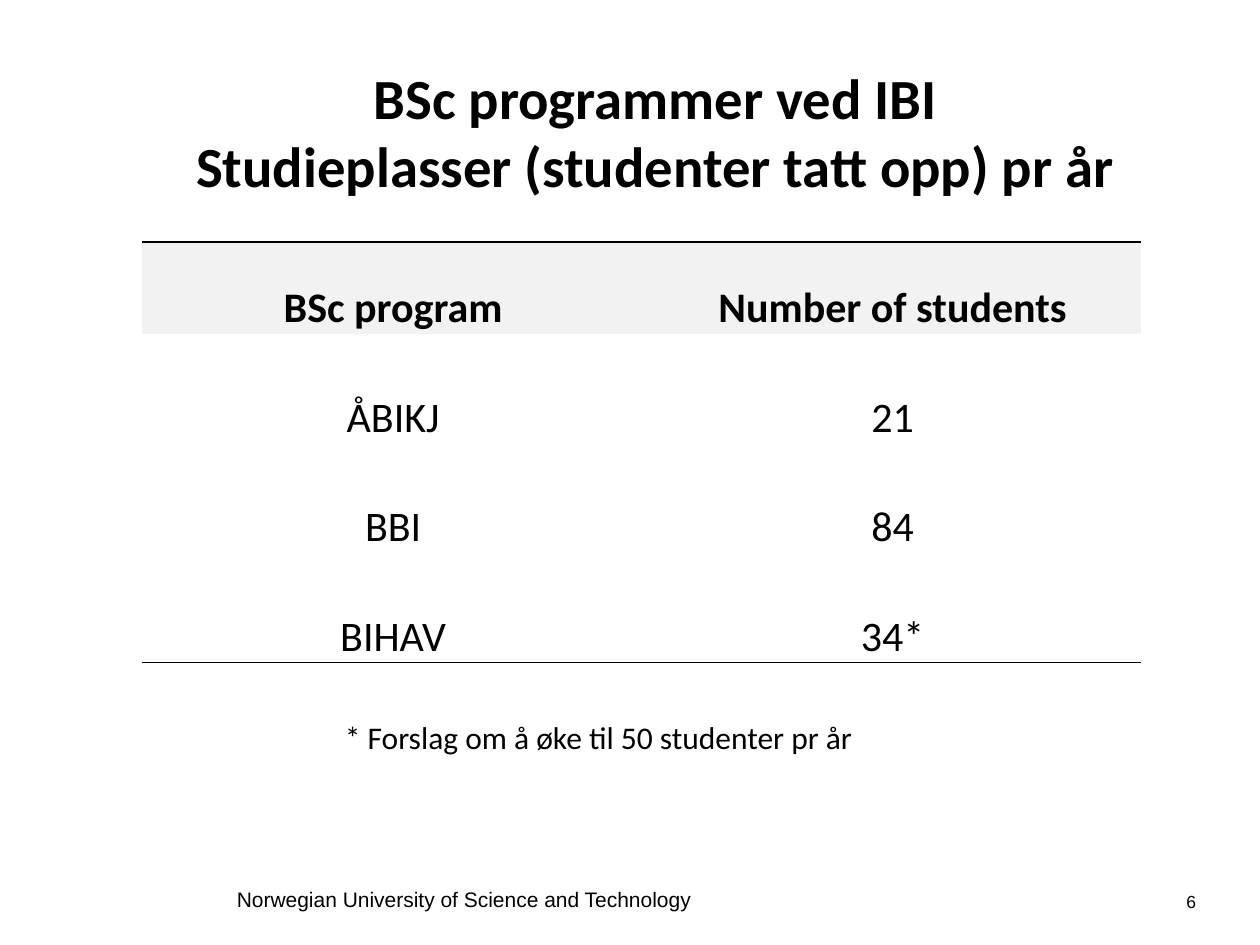
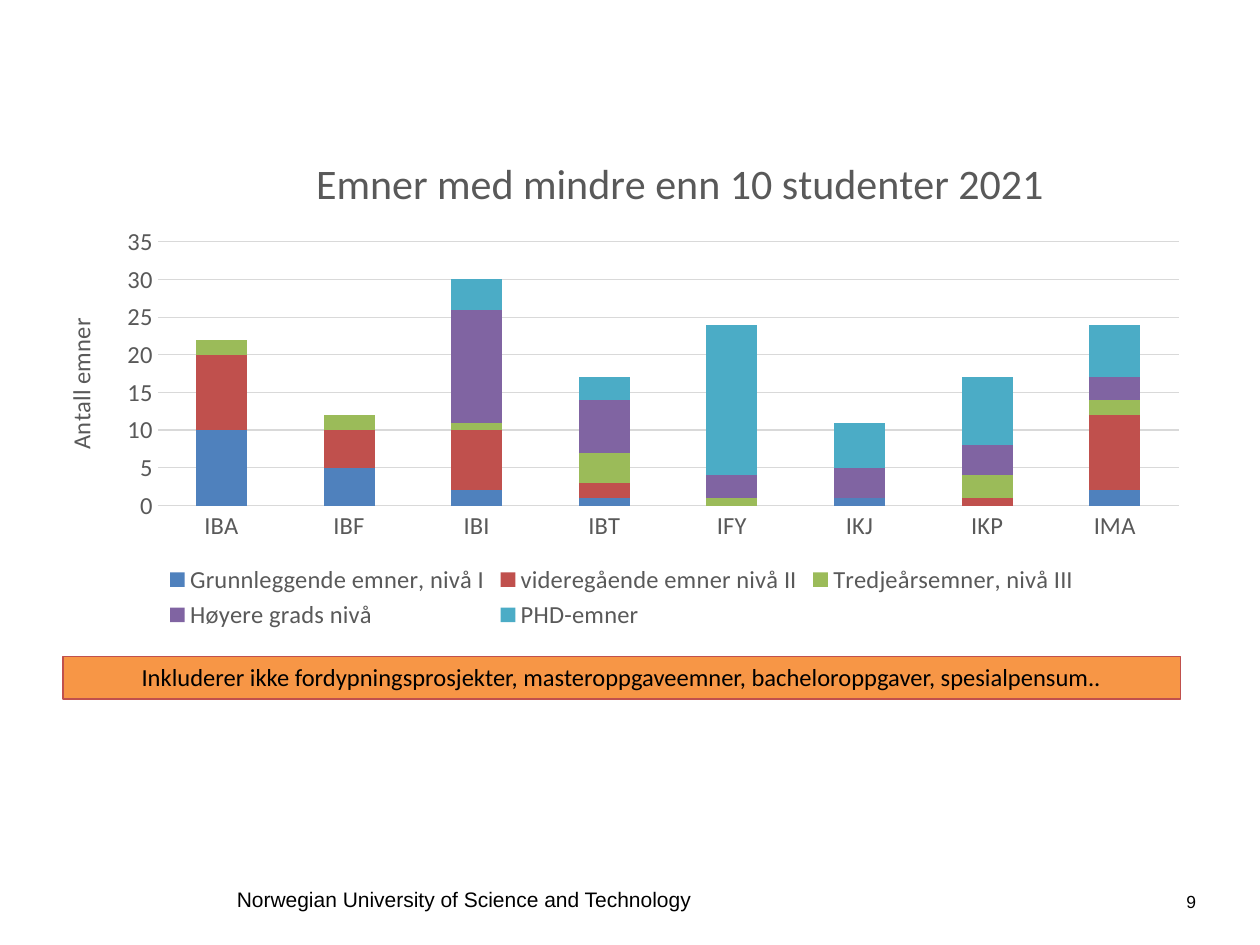
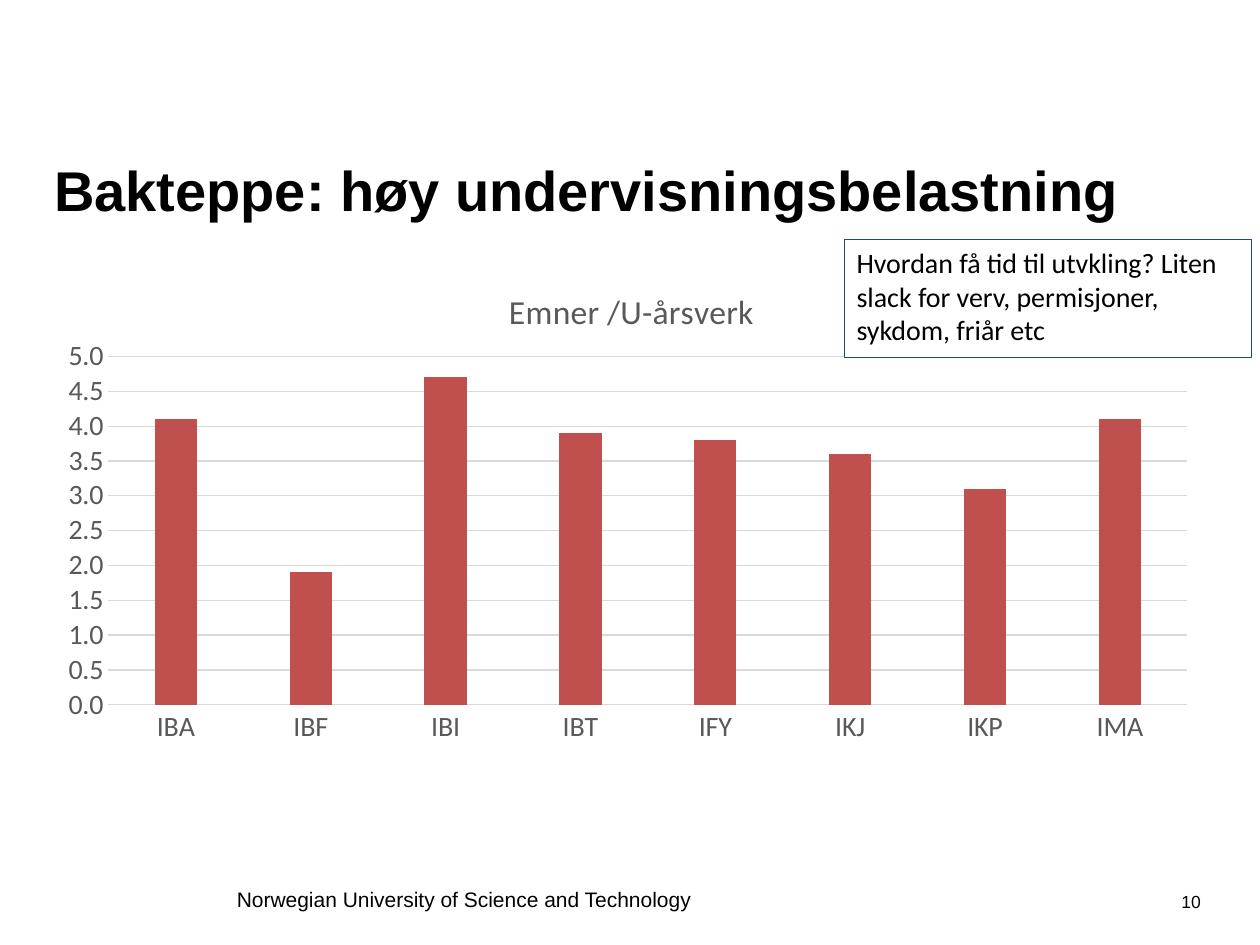
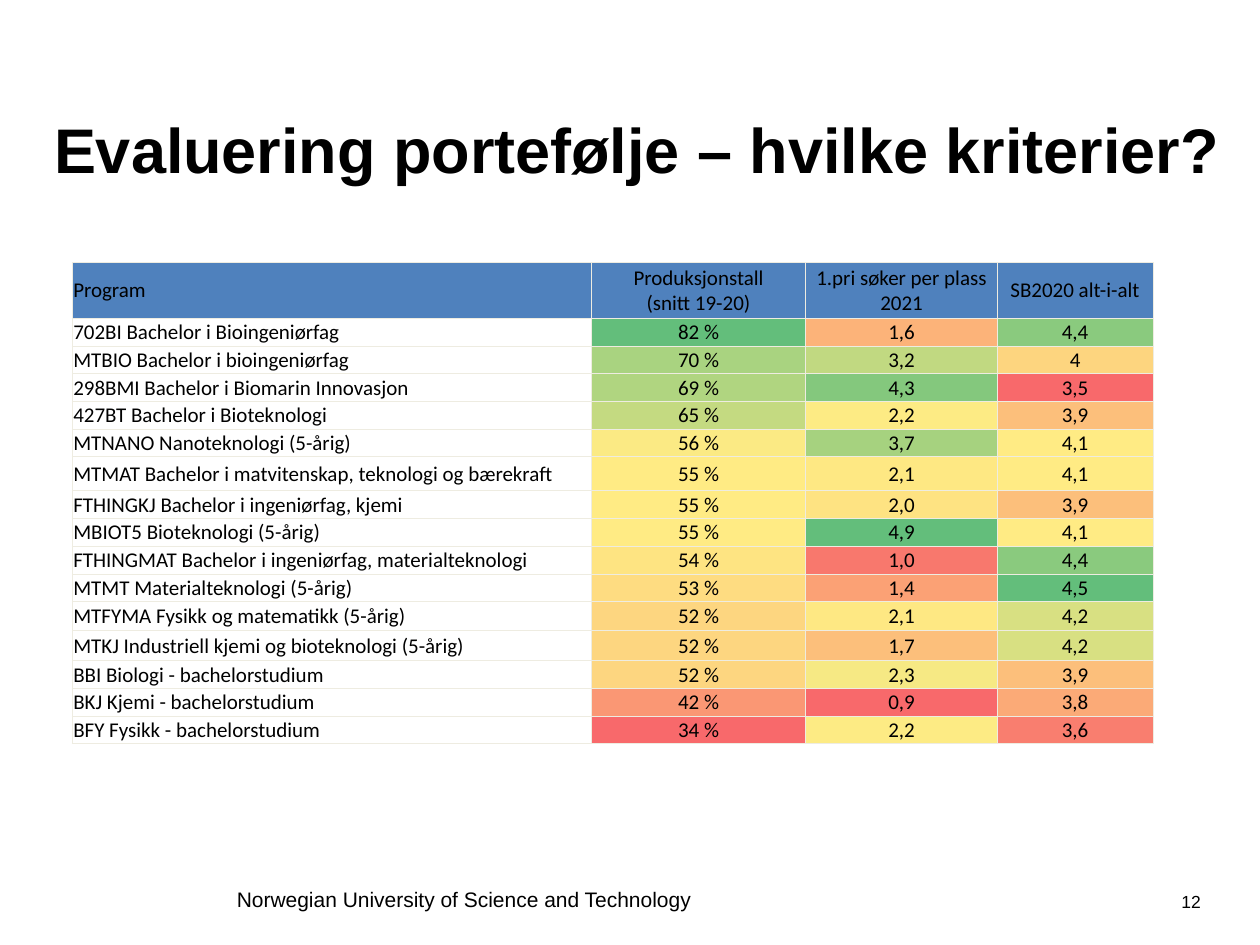
"""Build four slides on study programmes: two tables and two column charts."""
from lxml import etree
from pptx import Presentation
from pptx.chart.data import CategoryChartData
from pptx.dml.color import RGBColor
from pptx.enum.chart import XL_CHART_TYPE, XL_LEGEND_POSITION, XL_TICK_MARK
from pptx.enum.shapes import MSO_SHAPE
from pptx.enum.text import MSO_ANCHOR, PP_ALIGN
from pptx.oxml.ns import qn
from pptx.util import Pt

LEFT, CENTER = PP_ALIGN.LEFT, PP_ALIGN.CENTER
TOP, MIDDLE, BOTTOM = MSO_ANCHOR.TOP, MSO_ANCHOR.MIDDLE, MSO_ANCHOR.BOTTOM
STACKED, CLUSTERED = XL_CHART_TYPE.COLUMN_STACKED, XL_CHART_TYPE.COLUMN_CLUSTERED
LEGEND_BOTTOM = XL_LEGEND_POSITION.BOTTOM
NO_TICK = XL_TICK_MARK.NONE
RECT = MSO_SHAPE.RECTANGLE
NO_STYLE = "{2D5ABB26-0587-4C30-8999-92F81FD0307C}"
HEADING, BODY = "Arial", "Calibri"
FOOTER = "Norwegian University of Science and Technology"

COLORS = {
    "text": "000000", "paper": "FFFFFF", "header": "F2F2F2", "beige": "EEECE1",
    "chart_text": "595959", "grid": "D9D9D9", "navy": "1F497D", "orange": "F79646",
    "blue": "4F81BD", "red": "C0504D", "green": "9BBB59", "purple": "8064A2",
    "aqua": "4BACC6",
}
HEAT = {
    "82 %": "63BE7B", "70 %": "A9D380", "69 %": "B0D580", "65 %": "C4DA81",
    "56 %": "FBEA84", "55 %": "FFEB84", "54 %": "FEE482", "53 %": "FEDC81",
    "52 %": "FDD680", "42 %": "FA9774", "34 %": "F8696B",
    "4,9": "63BE7B", "4,3": "84C87D", "3,7": "A6D27F", "3,2": "C1D981",
    "2,3": "F6E984", "2,2": "FDEB84", "2,1": "FEE883", "2,0": "FEE382",
    "1,7": "FCBF7B", "1,6": "FCB379", "1,4": "FBA175", "1,0": "F8786D",
    "0,9": "F8696B",
    "4,5": "63BE7B", "4,4": "8ACA7E", "4,2": "D8E082", "4,1": "FFEB84",
    "4": "FDD57F", "3,9": "FCBF7B", "3,8": "FBAA77", "3,6": "F97E6F",
    "3,5": "F8696B",
}


def add_text(s, box, text, size, font=BODY, bold=False, align=LEFT, anchor=TOP,
             fill=None, line=None):
    """Add a text box, or a filled and outlined rectangle, with one paragraph."""
    box = [Pt(v) for v in box]
    if fill:
        sp = s.shapes.add_shape(RECT, *box)
        sp.shadow.inherit = False
        sp.fill.solid()
        sp.fill.fore_color.rgb = RGBColor.from_string(COLORS[fill])
        sp.line.color.rgb = RGBColor.from_string(COLORS[line])
        sp.line.width = Pt(0.75)
    else:
        sp = s.shapes.add_textbox(*box)
    tf = sp.text_frame
    tf.word_wrap = True
    tf.vertical_anchor = anchor
    p = tf.paragraphs[0]
    p.text = text
    p.alignment = align
    p.font.size, p.font.name, p.font.bold = Pt(size), font, bold
    p.font.color.rgb = RGBColor.from_string(COLORS["text"])


def set_cell(cell, text, size, bold, align, anchor, borders, fill):
    """Write one table cell; borders maps line tags to colour and width."""
    cell.text_frame.text = text
    cell.vertical_anchor = anchor
    cell.margin_left = cell.margin_right = cell.margin_top = Pt(0.7)
    cell.margin_bottom = Pt(0)
    for p in cell.text_frame.paragraphs:
        p.alignment = align
        p.font.size, p.font.name, p.font.bold = Pt(size), BODY, bold
        p.font.color.rgb = RGBColor.from_string(COLORS["text"])
    for tag, (color, width) in borders.items():
        ln = etree.SubElement(cell._tc.get_or_add_tcPr(), qn(f"a:{tag}"), w=str(Pt(width)))
        solid = etree.SubElement(ln, qn("a:solidFill"))
        etree.SubElement(solid, qn("a:srgbClr"), val=COLORS[color])
    if fill:
        cell.fill.solid()
        cell.fill.fore_color.rgb = RGBColor.from_string(fill)
    else:
        cell.fill.background()


prs = Presentation()
prs.slide_width, prs.slide_height = Pt(720), Pt(540)
slides = []
for number in (6, 9, 10, 12):
    s = prs.slides.add_slide(prs.slide_layouts[6])
    add_text(s, (128.2, 503.3, 300, 21.6), FOOTER, 12, HEADING)
    add_text(s, (667.4, 505.4, 26.6, 28.8), str(number), 10, HEADING, align=CENTER)
    slides.append(s)
places_slide, courses_slide, load_slide, criteria_slide = slides

add_text(places_slide, (50.4, 29.5, 648, 90),
         "BSc programmer ved IBI\nStudieplasser (studenter tatt opp) pr år",
         32.4, bold=True, align=CENTER, anchor=MIDDLE)
add_text(load_slide, (23.8, 85, 672.5, 46), "Bakteppe: høy undervisningsbelastning",
         32, HEADING, True, anchor=MIDDLE)
add_text(criteria_slide, (23.8, 37.4, 684, 95), "Evaluering portefølje – hvilke kriterier?",
         36, HEADING, True, anchor=MIDDLE)

places = [
    ("BSc program", "Number of students"),
    ("ÅBIKJ", "21"),
    ("BBI", "84"),
    ("BIHAV", "34*"),
]
programmes = [
    ("Program", "Produksjonstall\n(snitt 19-20)", "1.pri søker per plass 2021",
     "SB2020 alt-i-alt"),
    ("702BI Bachelor i Bioingeniørfag", "82 %", "1,6", "4,4"),
    ("MTBIO Bachelor i bioingeniørfag", "70 %", "3,2", "4"),
    ("298BMI Bachelor i Biomarin Innovasjon", "69 %", "4,3", "3,5"),
    ("427BT Bachelor i Bioteknologi", "65 %", "2,2", "3,9"),
    ("MTNANO Nanoteknologi (5-årig)", "56 %", "3,7", "4,1"),
    ("MTMAT Bachelor i matvitenskap, teknologi og bærekraft", "55 %", "2,1", "4,1"),
    ("FTHINGKJ Bachelor i ingeniørfag, kjemi", "55 %", "2,0", "3,9"),
    ("MBIOT5 Bioteknologi (5-årig)", "55 %", "4,9", "4,1"),
    ("FTHINGMAT Bachelor i ingeniørfag, materialteknologi", "54 %", "1,0", "4,4"),
    ("MTMT Materialteknologi (5-årig)", "53 %", "1,4", "4,5"),
    ("MTFYMA Fysikk og matematikk (5-årig)", "52 %", "2,1", "4,2"),
    ("MTKJ Industriell kjemi og bioteknologi (5-årig)", "52 %", "1,7", "4,2"),
    ("BBI Biologi - bachelorstudium", "52 %", "2,3", "3,9"),
    ("BKJ Kjemi - bachelorstudium", "42 %", "0,9", "3,8"),
    ("BFY Fysikk - bachelorstudium", "34 %", "2,2", "3,6"),
]
place_heights = [52.6] + [62.6] * 3
programme_heights = [31.7] + [15.85] * 15
programme_heights[6], programme_heights[11], programme_heights[12] = 19.4, 16.6, 17.1

tables = []
for s, rows, left, top, widths, heights in (
    (places_slide, places, 81.4, 138.2, (286.5, 284.4), place_heights),
    (criteria_slide, programmes, 41.2, 150, (296.8, 122.4, 109.6, 88.8), programme_heights),
):
    frame = s.shapes.add_table(len(rows), len(widths), Pt(left), Pt(top),
                               Pt(sum(widths)), Pt(sum(heights)))
    table = frame.table
    table.first_row = table.horz_banding = False
    table._tbl.tblPr.find(qn("a:tableStyleId")).text = NO_STYLE
    for column, width in zip(table.columns, widths):
        column.width = Pt(width)
    for row, height in zip(table.rows, heights):
        row.height = Pt(height)
    tables.append(table)
places_table, programmes_table = tables

for i, row in enumerate(places):
    borders = {0: {"lnT": ("text", 1)}, 3: {"lnB": ("text", 1)}}.get(i, {})
    for j, text in enumerate(row):
        set_cell(places_table.cell(i, j), text, 24, i == 0, CENTER, BOTTOM, borders,
                 COLORS["header"] if i == 0 else None)

grid_lines = {tag: ("beige", 0.25) for tag in ("lnL", "lnR", "lnT", "lnB")}
for i, row in enumerate(programmes):
    for j, text in enumerate(row):
        set_cell(programmes_table.cell(i, j), text, 12, False, CENTER if j else LEFT, MIDDLE,
                 grid_lines, COLORS["blue"] if i == 0 else HEAT.get(text))

add_text(places_slide, (190, 406.8, 310, 28.8), "* Forslag om å øke til 50 studenter pr år", 18)

institutes = ("IBA", "IBF", "IBI", "IBT", "IFY", "IKJ", "IKP", "IMA")
course_series = [
    ("Grunnleggende emner, nivå I", (10, 5, 2, 1, None, 1, None, 2), "blue"),
    ("videregående emner nivå II", (10, 5, 8, 2, None, None, 1, 10), "red"),
    ("Tredjeårsemner, nivå III", (2, 2, 1, 4, 1, None, 3, 2), "green"),
    ("Høyere grads nivå", (None, None, 15, 7, 3, 4, 4, 3), "purple"),
    ("PHD-emner", (None, None, 4, 3, 20, 6, 9, 7), "aqua"),
]
load_series = [("Series 1", (4.1, 1.9, 4.7, 3.9, 3.8, 3.6, 3.1, 4.1), "red")]
gray = RGBColor.from_string(COLORS["chart_text"])
grid = RGBColor.from_string(COLORS["grid"])

charts = []
for (s, kind, left, top, series, title, title_size, size, gap, overlap, maximum, step,
     number_format, title_spot, plot_spot) in (
    (courses_slide, STACKED, 23.8, 78.5, course_series,
     "Emner med mindre enn 10 studenter 2021", 24, 14, 150, 100, 35, 5, "General",
     {"x": 0.23, "y": 0.02}, {"x": 0.1, "y": 0.21, "w": 0.88, "h": 0.53}),
    (load_slide, CLUSTERED, 28.8, 146.9, load_series,
     "Emner /U-årsverk", 19.2, 16, 219, -27, 5, 0.5, "0.0",
     {"x": 0.39, "y": 0.05}, {"x": 0.05, "y": 0.2, "w": 0.93, "h": 0.7}),
):
    data = CategoryChartData()
    data.categories = institutes
    for name, values, color in series:
        data.add_series(name, values)
    chart = s.shapes.add_chart(kind, Pt(left), Pt(top), Pt(663), Pt(284.4), data).chart
    chart.font.size, chart.font.name = Pt(size), BODY
    chart.font.color.rgb = gray
    chart.has_legend = False
    p = chart.chart_title.text_frame.paragraphs[0]
    p.text = title
    p.font.size, p.font.name, p.font.bold = Pt(title_size), BODY, False
    p.font.color.rgb = gray

    plot = chart.plots[0]
    plot.gap_width, plot.overlap, plot.vary_by_categories = gap, overlap, False
    for bars, (name, values, color) in zip(plot.series, series):
        bars.format.fill.solid()
        bars.format.fill.fore_color.rgb = RGBColor.from_string(COLORS[color])
        bars.invert_if_negative = False

    cats, vals = chart.category_axis, chart.value_axis
    for axis in (cats, vals):
        axis.major_tick_mark = axis.minor_tick_mark = NO_TICK
    vals.minimum_scale, vals.maximum_scale, vals.major_unit = 0, maximum, step
    vals.tick_labels.number_format = number_format
    vals.tick_labels.number_format_is_linked = False
    vals.format.line.fill.background()
    vals.has_major_gridlines = True
    for line in (cats.format.line, vals.major_gridlines.format.line):
        line.color.rgb = grid
        line.width = Pt(0.75)

    for tag, spot in (("c:title", title_spot), ("c:plotArea", plot_spot)):
        area = chart._chartSpace.chart.find(qn(tag))
        for old in area.findall(qn("c:layout")):
            area.remove(old)
        layout = etree.Element(qn("c:layout"))
        area.insert(1 if tag == "c:title" else 0, layout)
        manual = etree.SubElement(layout, qn("c:manualLayout"))
        if tag == "c:plotArea":
            etree.SubElement(manual, qn("c:layoutTarget"), val="inner")
        for key in ("x", "y"):
            etree.SubElement(manual, qn(f"c:{key}Mode"), val="edge")
        for key, value in spot.items():
            etree.SubElement(manual, qn(f"c:{key}"), val=str(value))
    charts.append(chart)

courses_chart = charts[0]
courses_chart.has_legend = True
courses_chart.legend.position = LEGEND_BOTTOM
courses_chart.legend.include_in_layout = False
p = courses_chart.value_axis.axis_title.text_frame.paragraphs[0]
p.text = "Antall emner"
p.font.size, p.font.name, p.font.bold = Pt(14), BODY, False
p.font.color.rgb = gray

add_text(courses_slide, (36, 375, 638.6, 24.5),
         "Inkluderer ikke fordypningsprosjekter, masteroppgaveemner, bacheloroppgaver, "
         "spesialpensum..", 14, align=CENTER, fill="orange", line="red")
add_text(load_slide, (482.4, 136.8, 232.6, 67.7),
         "Hvordan få tid til utvkling? Liten slack for verv, permisjoner, sykdom, friår etc",
         16, fill="paper", line="navy")

prs.save("out.pptx")
